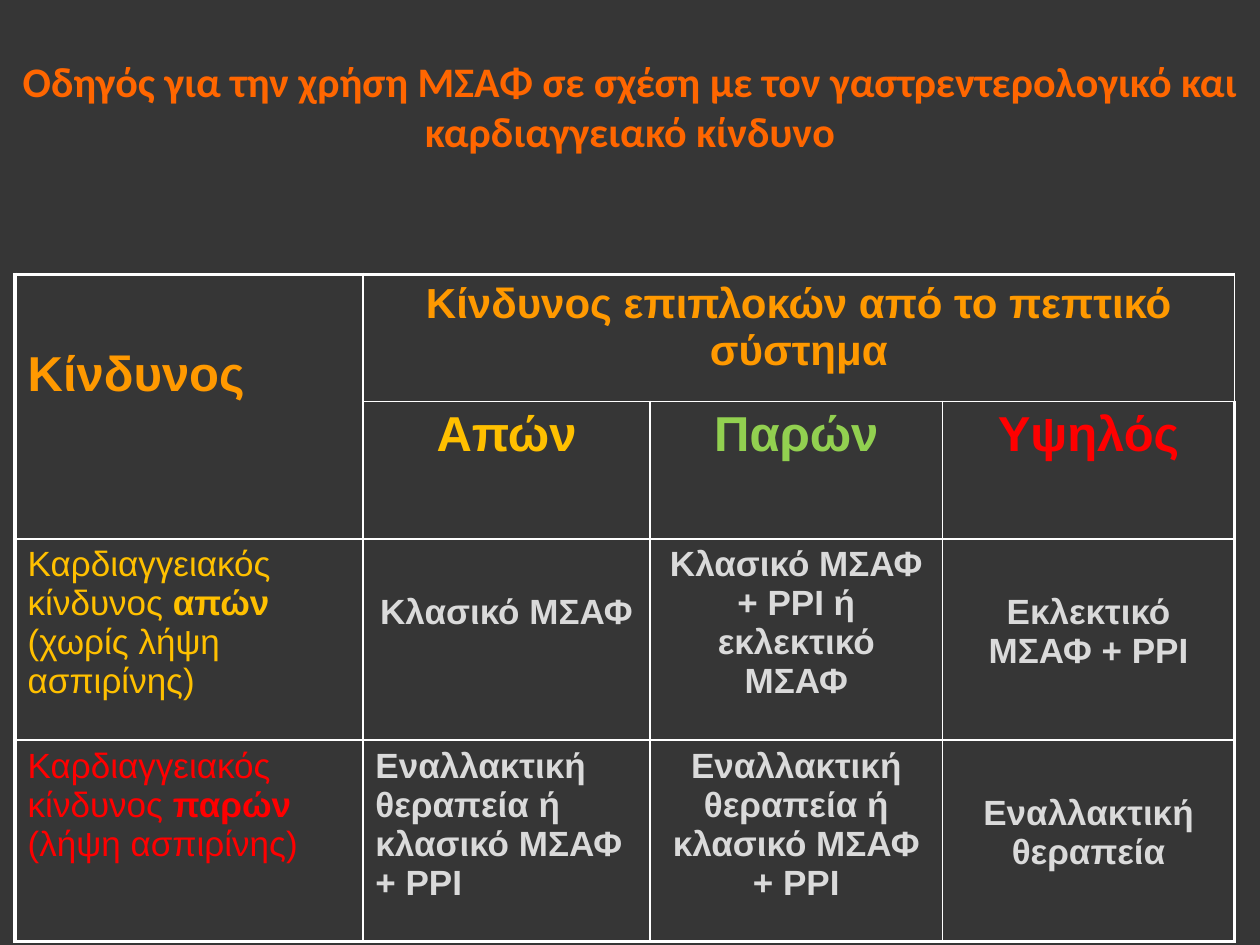
from dataclasses import dataclass

from lxml import etree
from pptx import Presentation
from pptx.dml.color import RGBColor
from pptx.enum.text import MSO_ANCHOR, PP_ALIGN
from pptx.oxml.ns import qn
from pptx.util import Pt

LEFT, CENTER = PP_ALIGN.LEFT, PP_ALIGN.CENTER
MIDDLE = MSO_ANCHOR.MIDDLE
BACKGROUND, WHITE, GREY = "363636", "FFFFFF", "DADADA"
TITLE_ORANGE, ORANGE, AMBER = "FF6600", "FF9900", "FFC000"
GREEN, RED = "92D050", "FF0000"
COLUMN_WIDTHS = (198.72, 164.16, 167.04, 167.04)
ROW_HEIGHTS = (72.5, 75, 115, 115)
MARGIN_X, MARGIN_Y = 7.2, 3.6
OUTER, INNER = 2.25, 1
LOWERED = 30.6
ALTERNATIVE = "Εναλλακτική θεραπεία"
CLASSIC = "Κλασικό ΜΣΑΦ"
ALTERNATIVE_OR_CLASSIC = f"{ALTERNATIVE} ή κλασικό ΜΣΑΦ + PPI"


@dataclass(frozen=True)
class Run:
    text: str
    bold: bool = True


@dataclass(frozen=True)
class Entry:
    row: int
    col: int
    runs: tuple[Run, ...]
    color: str = GREY
    size: float = 20
    align: PP_ALIGN = CENTER
    top: float = MARGIN_Y


def risk_runs(state: str, detail: str) -> tuple[Run, ...]:
    return Run("Καρδιαγγειακός κίνδυνος ", False), Run(f"{state} "), Run(detail, False)


ENTRIES = (
    Entry(0, 0, (Run("Κίνδυνος"),), ORANGE, 28, LEFT, 41.4),
    Entry(0, 1, (Run("Κίνδυνος επιπλοκών από το πεπτικό σύστημα"),), ORANGE, 24),
    Entry(1, 1, (Run("Απών"),), AMBER, 28),
    Entry(1, 2, (Run("Παρών"),), GREEN, 28),
    Entry(1, 3, (Run("Υψηλός"),), RED, 28),
    Entry(2, 0, risk_runs("απών", "(χωρίς λήψη ασπιρίνης)"), AMBER, align=LEFT),
    Entry(2, 1, (Run(CLASSIC),), top=LOWERED),
    Entry(2, 2, (Run(f"{CLASSIC} + PPI ή εκλεκτικό ΜΣΑΦ"),)),
    Entry(2, 3, (Run("Εκλεκτικό ΜΣΑΦ + PPI"),), top=LOWERED),
    Entry(3, 0, risk_runs("παρών", "(λήψη ασπιρίνης)"), RED, align=LEFT),
    Entry(3, 1, (Run(ALTERNATIVE_OR_CLASSIC),), align=LEFT),
    Entry(3, 2, (Run(ALTERNATIVE_OR_CLASSIC),)),
    Entry(3, 3, (Run(ALTERNATIVE),), top=LOWERED),
)


def rgb(value: str) -> RGBColor:
    return RGBColor.from_string(value)


def add_runs(p, runs: tuple[Run, ...], font: str, size: float, color: str) -> None:
    for run in runs:
        r = p.add_run()
        r.text = run.text
        r.font.name = font
        r.font.size = Pt(size)
        r.font.bold = run.bold
        r.font.color.rgb = rgb(color)


def add_title(s) -> None:
    sp = s.shapes.add_textbox(Pt(0), Pt(9.36), Pt(720), Pt(102.24))
    tf = sp.text_frame
    tf.word_wrap = True
    tf.vertical_anchor = MIDDLE
    p = tf.paragraphs[0]
    p.alignment = CENTER
    title = "Οδηγός για την χρήση ΜΣΑΦ σε σχέση με τον γαστρεντερολογικό και καρδιαγγειακό κίνδυνο"
    add_runs(p, (Run(title),), "Calibri", 24, TITLE_ORANGE)


def set_borders(cell, row: int, col: int) -> None:
    tc_pr = cell._tc.get_or_add_tcPr()
    edges = {
        "L": col == 0,
        "R": col == len(COLUMN_WIDTHS) - 1,
        "T": row == 0,
        "B": row == len(ROW_HEIGHTS) - 1,
    }
    for side, outer in edges.items():
        ln = etree.SubElement(tc_pr, qn(f"a:ln{side}"), w=str(Pt(OUTER if outer else INNER)))
        fill = etree.SubElement(ln, qn("a:solidFill"))
        etree.SubElement(fill, qn("a:srgbClr"), val=WHITE)


def fill_cell(cell, entry: Entry) -> None:
    cell.margin_top = Pt(entry.top)
    p = cell.text_frame.paragraphs[0]
    p.alignment = entry.align
    add_runs(p, entry.runs, "Arial", entry.size, entry.color)


def add_risk_table(s) -> None:
    rows, cols = len(ROW_HEIGHTS), len(COLUMN_WIDTHS)
    frame = s.shapes.add_table(
        rows, cols, Pt(8.64), Pt(156.8), Pt(sum(COLUMN_WIDTHS)), Pt(sum(ROW_HEIGHTS))
    )
    table = frame.table
    table.first_row = table.horz_banding = False
    for column, width in zip(table.columns, COLUMN_WIDTHS):
        column.width = Pt(width)
    for row, height in zip(table.rows, ROW_HEIGHTS):
        row.height = Pt(height)
    for i in range(rows):
        for j in range(cols):
            cell = table.cell(i, j)
            set_borders(cell, i, j)
            cell.fill.background()
            cell.margin_left = cell.margin_right = Pt(MARGIN_X)
            cell.margin_top = cell.margin_bottom = Pt(MARGIN_Y)
    table.cell(0, 0).merge(table.cell(1, 0))
    table.cell(0, 1).merge(table.cell(0, 3))
    for entry in ENTRIES:
        fill_cell(table.cell(entry.row, entry.col), entry)


def main() -> None:
    """Build the slide on choosing NSAIDs by gastrointestinal and cardiovascular risk."""
    prs = Presentation()
    prs.slide_width, prs.slide_height = Pt(720), Pt(540)
    s = prs.slides.add_slide(prs.slide_layouts[6])
    s.background.fill.solid()
    s.background.fill.fore_color.rgb = rgb(BACKGROUND)
    add_title(s)
    add_risk_table(s)
    prs.save("out.pptx")


if __name__ == "__main__":
    main()
